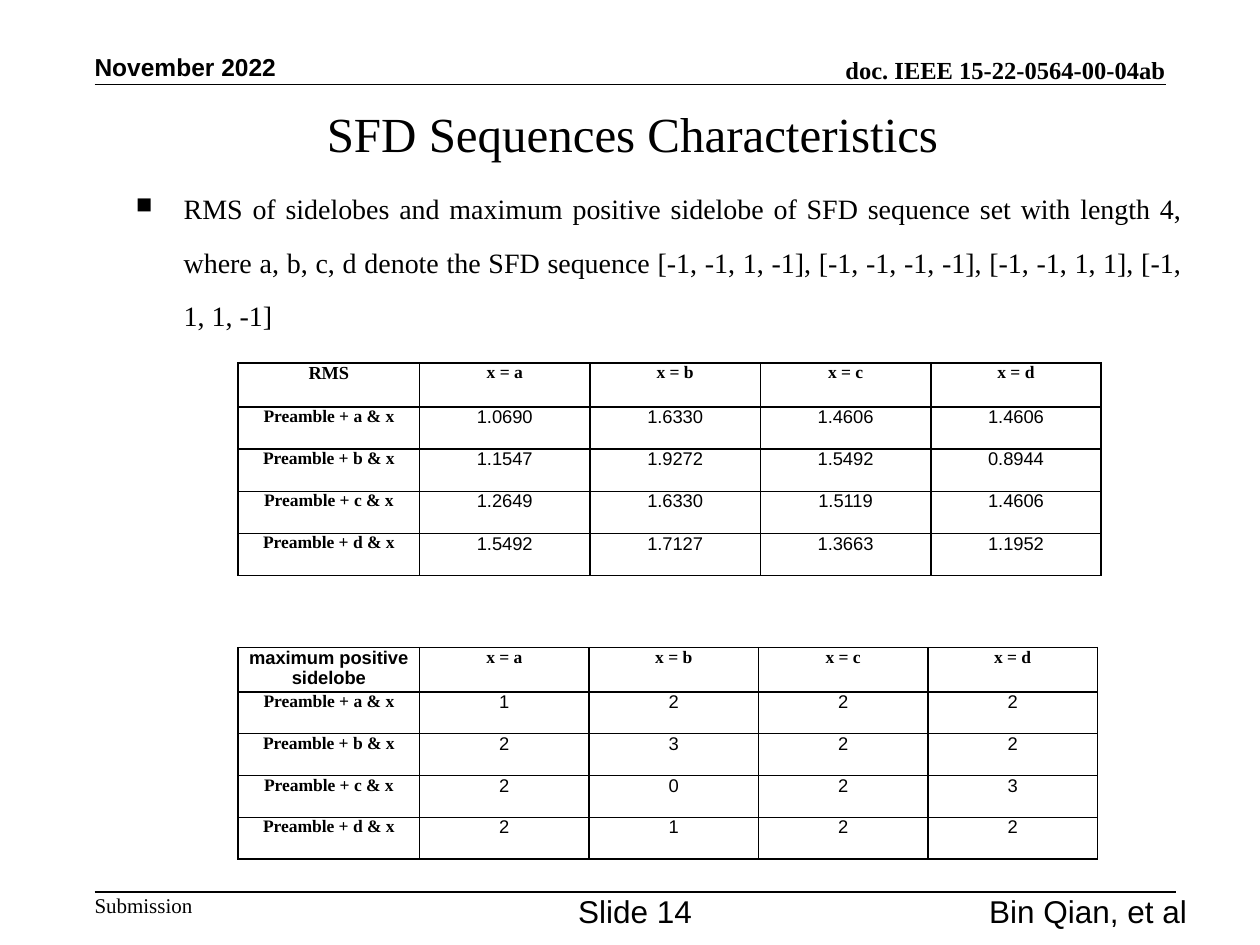
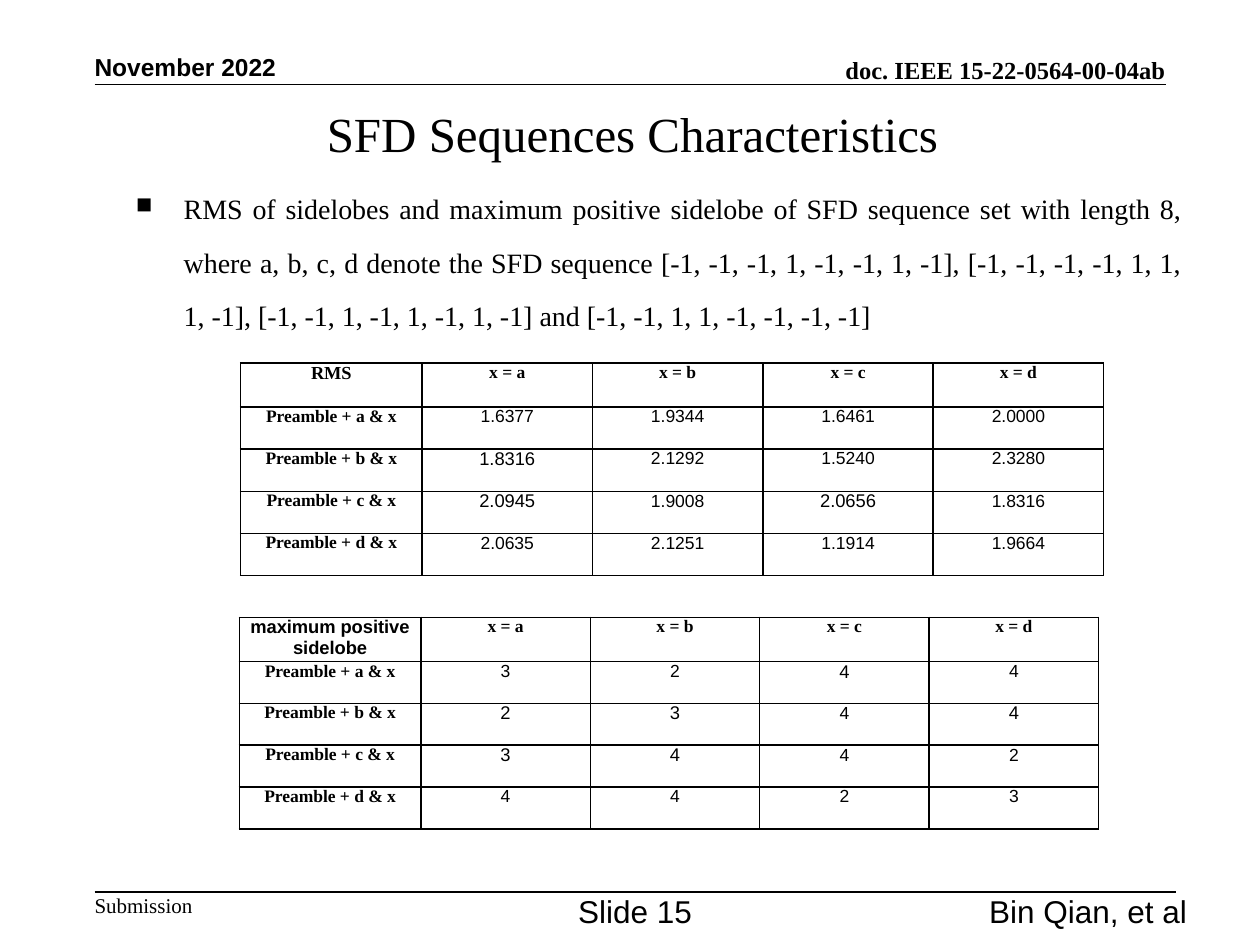
import pptx
import pptx.util
import pptx.dml.color
import pptx.enum.shapes
import pptx.enum.text
import pptx.oxml
import pptx.oxml.ns
from lxml import etree

COLS, ROWS = 100, 75
SLIDE_W, SLIDE_H = pptx.util.Inches(10), pptx.util.Inches(7.5)
BLACK, WHITE = "000000", "FFFFFF"
SERIF, SANS = "Times New Roman", "Arial"
ALIGN = pptx.enum.text.PP_ALIGN
ANCHOR = pptx.enum.text.MSO_ANCHOR

TITLE_STYLE = {"name": SERIF, "size": 28, "bold": False}
BODY_STYLE = {"name": SERIF, "size": 16, "bold": False}
DATE_STYLE = {"name": SANS, "size": 14, "bold": True}
DOC_STYLE = {"name": SERIF, "size": 14, "bold": True}
SUBMISSION_STYLE = {"name": SERIF, "size": 12, "bold": False}
FOOTER_STYLE = {"name": SANS, "size": 18, "bold": False}
LABEL_STYLE = {"name": SERIF, "size": 10, "bold": True}
VALUE_STYLE = {"name": SANS, "size": 10, "bold": False}

HEADER_BOX = (7.5, 4.1, 85, 2.6)
TITLE_BOX = (7.7, 4.7, 85, 11.7)
BODY_BOX = (9.8, 13.1, 85, 55.6)
FOOTER_BOX = (7.5, 70.8, 85.8, 2)

RMS_CORNER = ("RMS", SERIF)
PEAK_CORNER = ("maximum positive sidelobe", SANS)
ALL_CELLS = {(i, j) for i in range(1, 5) for j in range(1, 5)}

SLIDES = [
    {
        "number": 14,
        "text": "RMS of sidelobes and maximum positive sidelobe of SFD sequence set "
                "with length 4, where a, b, c, d denote the SFD sequence "
                "[-1, -1, 1, -1], [-1, -1, -1, -1], [-1, -1, 1, 1], [-1, 1, 1, -1]",
        "tables": [
            {"box": (18.9, 28.8, 68.5, 16.9), "corner": RMS_CORNER, "large": ALL_CELLS,
             "values": ["1.0690 1.6330 1.4606 1.4606", "1.1547 1.9272 1.5492 0.8944",
                        "1.2649 1.6330 1.5119 1.4606", "1.5492 1.7127 1.3663 1.1952"]},
            {"box": (18.9, 51.4, 68.2, 16.8), "corner": PEAK_CORNER, "large": ALL_CELLS,
             "values": ["1 2 2 2", "2 3 2 2", "2 0 2 3", "2 1 2 2"]},
        ],
    },
    {
        "number": 15,
        "text": "RMS of sidelobes and maximum positive sidelobe of SFD sequence set "
                "with length 8, where a, b, c, d denote the SFD sequence "
                "[-1, -1, -1, 1, -1, -1, 1, -1], [-1, -1, -1, -1, 1, 1, 1, -1], "
                "[-1, -1, 1, -1, 1, -1, 1, -1] and [-1, -1, 1, 1, -1, -1, -1, -1]",
        "tables": [
            {"box": (19.1, 28.8, 68.5, 16.9), "corner": RMS_CORNER,
             "large": {(2, 1), (3, 1), (3, 3)},
             "values": ["1.6377 1.9344 1.6461 2.0000", "1.8316 2.1292 1.5240 2.3280",
                        "2.0945 1.9008 2.0656 1.8316", "2.0635 2.1251 1.1914 1.9664"]},
            {"box": (19, 49, 68.2, 16.8), "corner": PEAK_CORNER,
             "large": {(1, 3), (2, 1), (2, 2), (2, 4), (3, 1), (3, 2)},
             "values": ["3 2 4 4", "2 3 4 4", "3 4 4 2", "4 4 2 3"]},
        ],
    },
]


def rgb(value):
    """Return the colour for a hex string."""
    return pptx.dml.color.RGBColor.from_string(value)


def across(cols):
    """Return the width of a number of grid columns."""
    return round(SLIDE_W * cols / COLS)


def down(rows):
    """Return the height of a number of grid rows."""
    return round(SLIDE_H * rows / ROWS)


def place(box):
    """Return left, top, width and height of a grid box."""
    left, top, width, height = box
    return across(left), down(top), across(width), down(height)


def set_margins(target, cols, rows):
    """Set equal side margins and equal top and bottom margins."""
    for side in ("left", "right"):
        setattr(target, f"margin_{side}", across(cols))
    for side in ("top", "bottom"):
        setattr(target, f"margin_{side}", down(rows))


def write(tf, text, style, align):
    """Write one styled paragraph into a text frame and return it."""
    p = tf.paragraphs[0]
    p.alignment = align
    r = p.add_run()
    r.text = text
    for key, value in style.items():
        setattr(r.font, key, pptx.util.Pt(value) if key == "size" else value)
    r.font.color.rgb = rgb(BLACK)
    return p


def add_label(s, box, text, style, align=ALIGN.LEFT, anchor=ANCHOR.TOP):
    """Add a text box without margins."""
    tf = s.shapes.add_textbox(*place(box)).text_frame
    tf.word_wrap = True
    tf.vertical_anchor = anchor
    tf.auto_size = pptx.enum.text.MSO_AUTO_SIZE.SHAPE_TO_FIT_TEXT
    set_margins(tf, 0, 0)
    write(tf, text, style, align)


def add_rule(s, left, top, width):
    """Add a thin horizontal line."""
    x, y, w, _ = place((left, top, width, 0))
    line = s.shapes.add_connector(
        pptx.enum.shapes.MSO_CONNECTOR.STRAIGHT, x, y, x + w, y)
    line.line.color.rgb = rgb(BLACK)
    line.line.width = pptx.util.Pt(1)
    etree.SubElement(line._element.spPr, pptx.oxml.ns.qn("a:effectLst"))


def add_header(s, box):
    """Add the date, the document number and the rule below them."""
    left, top, width, height = box
    add_label(s, (left + 26.8, top + 0.2, width - 26.8, 2.4),
              "doc. IEEE 15-22-0564-00-04ab", DOC_STYLE, ALIGN.RIGHT, ANCHOR.BOTTOM)
    add_label(s, (left, top, 17.5, 2.4), "November 2022", DATE_STYLE,
              anchor=ANCHOR.BOTTOM)
    add_rule(s, left, top + height, width)


def add_footer(s, box, number):
    """Add the rule, the submission mark, the slide number and the author."""
    left, top, width, height = box
    add_rule(s, left, top, width)
    add_label(s, (left, top, 7.8, height), "Submission", SUBMISSION_STYLE)
    add_label(s, (left + 37.9, top, 10, height), f"Slide {number}", FOOTER_STYLE,
              ALIGN.CENTER)
    add_label(s, (left + 52.5, top, 34.2, height), "Bin Qian, et al",
              FOOTER_STYLE, ALIGN.RIGHT)


def add_title(s, box, text):
    """Move and format the title placeholder."""
    sp = s.shapes.title
    sp.left, sp.top, sp.width, sp.height = place(box)
    tf = sp.text_frame
    tf.vertical_anchor = ANCHOR.MIDDLE
    set_margins(tf, 1, 0.5)
    write(tf, text, TITLE_STYLE, ALIGN.CENTER)


def add_body(s, box, text):
    """Add the justified paragraph with a square bullet."""
    qn = pptx.oxml.ns.qn
    tf = s.shapes.add_textbox(*place(box)).text_frame
    tf.word_wrap = True
    set_margins(tf, 1, 0.5)
    p = write(tf, text, BODY_STYLE, ALIGN.JUSTIFY)
    p.line_spacing = 1.6
    pPr = p._p.get_or_add_pPr()
    pPr.set("marL", str(across(3.8)))
    pPr.set("indent", str(-across(3.8)))
    etree.SubElement(pPr, qn("a:buSzPct"), val="80000")
    etree.SubElement(pPr, qn("a:buChar"), char="■")


def format_cell(cell, shaded):
    """Give a cell its borders, margins and fill."""
    qn = pptx.oxml.ns.qn
    tcPr = cell._tc.get_or_add_tcPr()
    for side in "LRTB":
        ln = etree.SubElement(tcPr, qn(f"a:ln{side}"), w=str(pptx.util.Pt(1)))
        fill = etree.SubElement(ln, qn("a:solidFill"))
        etree.SubElement(fill, qn("a:srgbClr"), val=BLACK)
    set_margins(cell, 0.7, 0)
    if shaded:
        cell.fill.solid()
        cell.fill.fore_color.rgb = rgb(WHITE)
        colour = tcPr.find(qn("a:solidFill")).find(qn("a:srgbClr"))
        etree.SubElement(colour, qn("a:alpha"), val="20000")
    else:
        cell.fill.background()


def add_sidelobe_table(s, box, corner, values, large):
    """Add a table of sidelobe values for each pair of sequences."""
    _, _, width, height = box
    corner_text, corner_font = corner
    rows = [[corner_text] + [f"x = {x}" for x in "abcd"]]
    rows += [[f"Preamble + {x} & x"] + line.split() for x, line in zip("abcd", values)]
    table = s.shapes.add_table(5, 5, *place(box)).table
    table.first_row = table.horz_banding = False
    for i in range(5):
        table.columns[i].width = across((width - 14.4) / 4 if i else 14.4)
        table.rows[i].height = down((height - 3.5) / 4 if i else 3.5)
    for i, row in enumerate(rows):
        for j, text in enumerate(row):
            style = dict(VALUE_STYLE if i and j else LABEL_STYLE)
            if i == j == 0:
                style["name"] = corner_font
            if i == j == 0 or (i, j) in large:
                style["size"] = 10.5
            cell = table.cell(i, j)
            format_cell(cell, i % 2 == 1)
            write(cell.text_frame, text, style, ALIGN.CENTER)


def add_sequence_slide(prs, number, text, tables):
    """Add a slide with a description and its tables."""
    s = prs.slides.add_slide(prs.slide_layouts[5])
    add_header(s, HEADER_BOX)
    add_footer(s, FOOTER_BOX, number)
    add_title(s, TITLE_BOX, "SFD Sequences Characteristics")
    add_body(s, BODY_BOX, text)
    for table in tables:
        add_sidelobe_table(s, **table)


def main():
    """Build the presentation and save it."""
    prs = pptx.Presentation()
    prs.slide_width, prs.slide_height = SLIDE_W, SLIDE_H
    for content in SLIDES:
        add_sequence_slide(prs, **content)
    prs.save("out.pptx")


if __name__ == "__main__":
    main()
